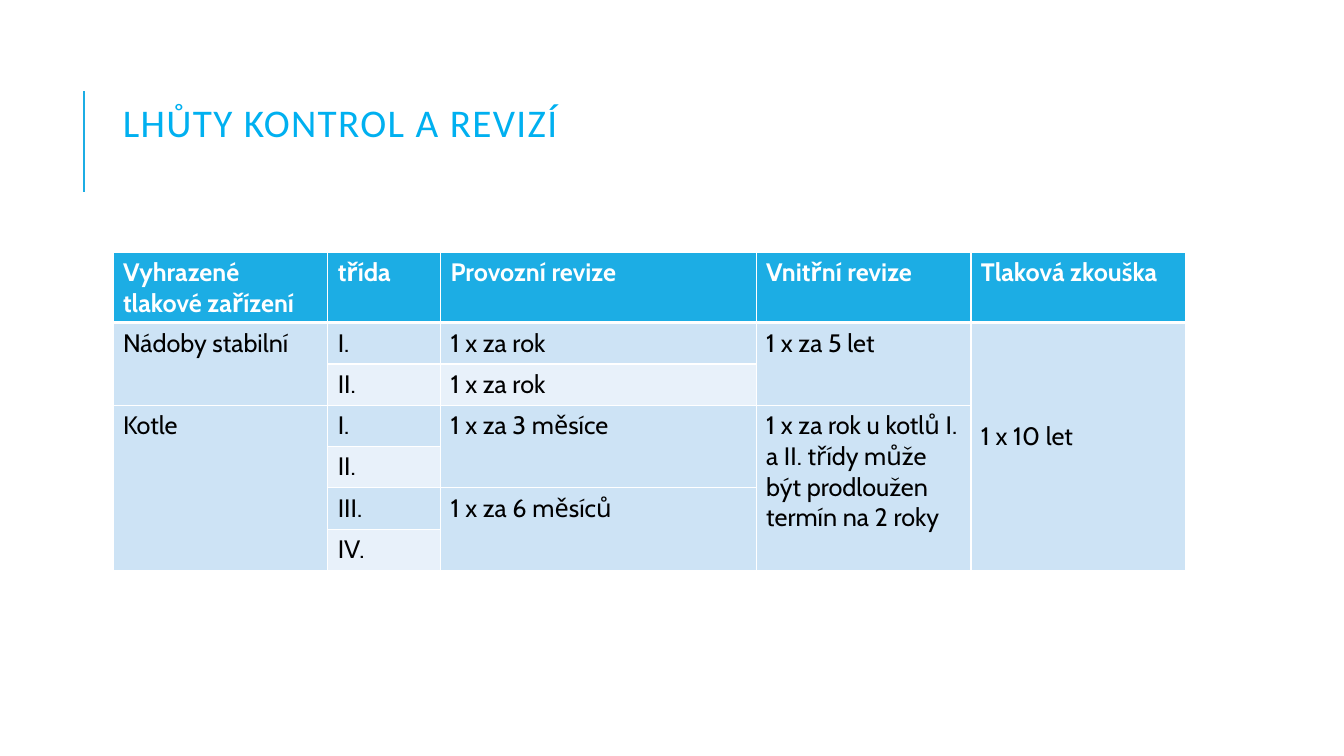
import pptx
import pptx.util
import pptx.dml.color
import pptx.enum.shapes
import pptx.enum.text
import pptx.oxml.ns
import lxml.etree

Inches, Pt = pptx.util.Inches, pptx.util.Pt
MIDDLE = pptx.enum.text.MSO_ANCHOR.MIDDLE

TITLE = "LHŮTY KONTROL A REVIZÍ"
HEADER = ["Vyhrazené tlakové zařízení", "třída", "Provozní revize", "Vnitřní revize", "Tlaková zkouška"]
# None continues the cell above it
BODY = [
    ["Nádoby stabilní", "I.", "1 x za rok", "1 x za 5 let", "1 x 10 let"],
    [None, "II.", "1 x za rok", None, None],
    ["Kotle", "I.", "1 x za 3 měsíce",
     "1 x za rok u kotlů I. a II. třídy může být prodloužen termín na 2 roky", None],
    [None, "II.", None, None, None],
    [None, "III.", "1 x za 6 měsíců", None, None],
    [None, "IV.", None, None, None],
]
COLUMN_WIDTHS = [2.13, 1.12, 3.13, 2.13, 2.13]
HEADER_HEIGHT, ROW_HEIGHT = 0.7, 0.41
LEFT, TABLE_TOP, WIDTH = 1.12, 2.5, sum(COLUMN_WIDTHS)

THEME = {
    "accent": "1CADE4",
    "bands": ["CDE3F5", "E8F1FA"],
    "border": "FFFFFF",
    "thin": 1,
    "thick": 3,
    "title": {"name": "Calibri", "size": Pt(28), "bold": False, "color": "00B0F0"},
    "header": {"name": "Cabin", "size": Pt(18), "bold": True, "color": "FFFFFF"},
    "body": {"name": "Cabin", "size": Pt(18), "bold": False, "color": "000000"},
}


def rgb(value):
    return pptx.dml.color.RGBColor.from_string(value)


def write(text_frame, text, style):
    run = text_frame.paragraphs[0].add_run()
    run.text = text
    for name, value in style.items():
        if name == "color":
            run.font.color.rgb = rgb(value)
        else:
            setattr(run.font, name, value)
    return run


def set_borders(cell, top, bottom):
    """Border elements must come before the fill in the cell properties."""
    properties = cell._tc.get_or_add_tcPr()
    qn = pptx.oxml.ns.qn
    widths = {"L": THEME["thin"], "R": THEME["thin"], "T": top, "B": bottom}
    for position, (side, width) in enumerate(widths.items()):
        line = lxml.etree.Element(qn("a:ln" + side), w=str(Pt(width)))
        fill = lxml.etree.SubElement(line, qn("a:solidFill"))
        lxml.etree.SubElement(fill, qn("a:srgbClr"), val=THEME["border"])
        properties.insert(position, line)


def add_title(slide):
    line = slide.shapes.add_connector(
        pptx.enum.shapes.MSO_CONNECTOR.STRAIGHT, Inches(0.83), Inches(1.9), Inches(0.83), Inches(0.9))
    line.line.color.rgb = rgb(THEME["accent"])
    line.line.width = Pt(1.5)
    lxml.etree.SubElement(line._element.spPr, pptx.oxml.ns.qn("a:effectLst"))

    box = slide.shapes.add_textbox(Inches(LEFT), Inches(0.64), Inches(WIDTH), Inches(1.23))
    frame = box.text_frame
    frame.word_wrap = True
    frame.vertical_anchor = MIDDLE
    frame.paragraphs[0].line_spacing = 0.8
    run = write(frame, TITLE, THEME["title"])
    run.font._element.set("spc", "100")


def add_schedule(slide):
    rows = [HEADER] + BODY
    heights = [HEADER_HEIGHT] + [ROW_HEIGHT] * len(BODY)
    table = slide.shapes.add_table(
        len(rows), len(HEADER), Inches(LEFT), Inches(TABLE_TOP), Inches(WIDTH), Inches(sum(heights))).table
    for column, width in zip(table.columns, COLUMN_WIDTHS):
        column.width = Inches(width)

    for row_index, row in enumerate(rows):
        table.rows[row_index].height = Inches(heights[row_index])
        is_header = row_index == 0
        fill = THEME["accent"] if is_header else THEME["bands"][(row_index - 1) % 2]
        for column_index, text in enumerate(row):
            cell = table.cell(row_index, column_index)
            cell.fill.solid()
            cell.fill.fore_color.rgb = rgb(fill)
            set_borders(cell,
                        THEME["thick"] if row_index == 1 else THEME["thin"],
                        THEME["thick"] if is_header else THEME["thin"])
            if text is None:
                continue
            write(cell.text_frame, text, THEME["header" if is_header else "body"])
            last = row_index
            while last + 1 < len(rows) and rows[last + 1][column_index] is None:
                last += 1
            if last > row_index:
                cell.merge(table.cell(last, column_index))

    pressure_test = table.cell(1, len(HEADER) - 1)
    pressure_test.vertical_anchor = MIDDLE
    pressure_test.margin_bottom = Inches(0.25)


def main():
    presentation = pptx.Presentation()
    presentation.slide_width = Inches(13.33)
    presentation.slide_height = Inches(7.5)
    slide = presentation.slides.add_slide(presentation.slide_layouts[6])
    add_title(slide)
    add_schedule(slide)
    presentation.save("out.pptx")


if __name__ == "__main__":
    main()
